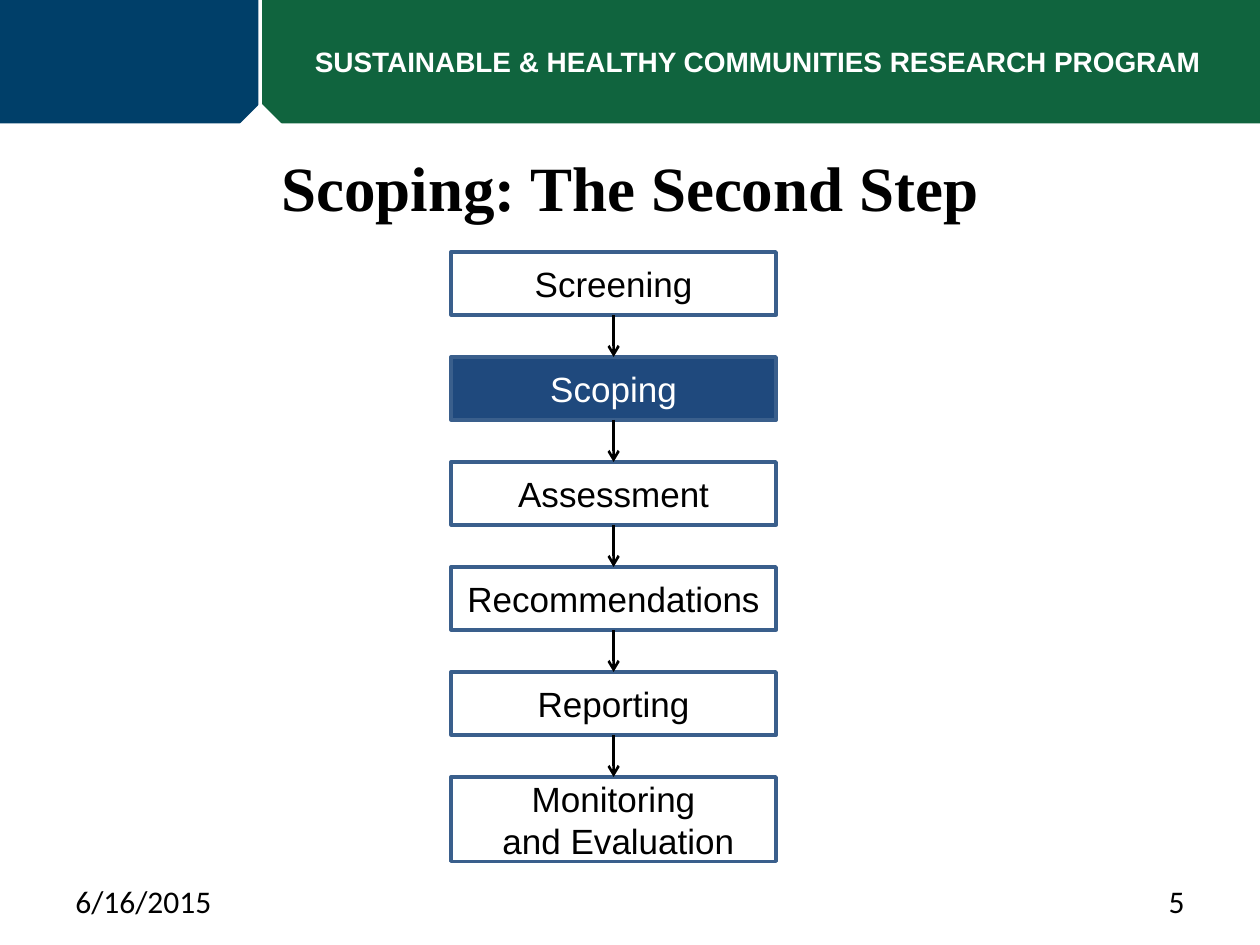
from dataclasses import dataclass

from lxml import etree
from pptx import Presentation
from pptx.dml.color import RGBColor
from pptx.enum import shapes, text
from pptx.oxml import ns
from pptx.util import Inches, Pt

WHITE = RGBColor(0xFF, 0xFF, 0xFF)
BLACK = RGBColor(0x00, 0x00, 0x00)
BANNER_BLUE = RGBColor(0x00, 0x3F, 0x69)
BANNER_GREEN = RGBColor(0x10, 0x64, 0x3E)
STEP_BLUE = RGBColor(0x1F, 0x49, 0x7D)
STEP_BORDER = RGBColor(0x3A, 0x5F, 0x8C)

STEP_LEFT, STEP_TOP, STEP_WIDTH, STEP_HEIGHT = 3.58, 2.0, 2.58, 0.5
STEP_PITCH = 5 / 6
BOTTOM, TOP = 2, 0


@dataclass(frozen=True)
class Step:
    lines: tuple[str, ...]
    height: float = STEP_HEIGHT
    current: bool = False


@dataclass(frozen=True)
class Label:
    words: str
    at: tuple[float, float, float, float]
    font: dict
    align: text.PP_ALIGN = text.PP_ALIGN.LEFT
    wrap: bool = True


STEPS = (
    Step(("Screening",)),
    Step(("Scoping",), current=True),
    Step(("Assessment",)),
    Step(("Recommendations",)),
    Step(("Reporting",)),
    Step(("Monitoring", " and Evaluation"), height=0.67),
)

FOOTER_FONT = {"name": "Calibri", "size": Pt(18)}
LABELS = (
    Label("SUSTAINABLE & HEALTHY COMMUNITIES RESEARCH PROGRAM", (2.4, 0.3, 7.35, 0.37),
          {"name": "Arial", "size": Pt(16), "bold": True, "color": WHITE}, wrap=False),
    Label("6/16/2015", (0.5, 6.95, 2.33, 0.4), FOOTER_FONT),
    Label("5", (7.17, 6.95, 2.33, 0.4), FOOTER_FONT, text.PP_ALIGN.RIGHT),
    Label("Scoping: The Second Step", (0.69, 1.11, 8.62, 0.74),
          {"name": "Times New Roman", "size": Pt(36), "bold": True}, text.PP_ALIGN.CENTER),
)


def write_lines(box, lines: tuple[str, ...], font: dict, align, wrap: bool = True) -> None:
    """Fill a shape with one formatted paragraph per line."""
    frame = box.text_frame
    frame.word_wrap = wrap
    frame.vertical_anchor = text.MSO_ANCHOR.MIDDLE
    for index, line in enumerate(lines):
        para = frame.add_paragraph() if index else frame.paragraphs[0]
        para.alignment = align
        span = para.add_run()
        span.text = line
        values = {"color": BLACK, **font}
        span.font.color.rgb = values.pop("color")
        for name, value in values.items():
            setattr(span.font, name, value)


def add_box(page, at: tuple[float, float, float, float], fill: RGBColor | None = None):
    box = page.shapes.add_shape(shapes.MSO_SHAPE.RECTANGLE, *map(Inches, at))
    box.shadow.inherit = False
    box.line.fill.background()
    if fill is None:
        box.fill.background()
    else:
        box.fill.solid()
        box.fill.fore_color.rgb = fill
    return box


def add_label(page, label: Label) -> None:
    box = page.shapes.add_textbox(*map(Inches, label.at))
    write_lines(box, (label.words,), label.font, label.align, label.wrap)


def add_step(page, step: Step, top: float):
    box = add_box(page, (STEP_LEFT, top, STEP_WIDTH, step.height),
                  STEP_BLUE if step.current else None)
    box.line.color.rgb = STEP_BORDER
    box.line.width = Pt(2)
    font = {"name": "Arial", "size": Pt(20), "color": WHITE if step.current else BLACK}
    write_lines(box, step.lines, font, text.PP_ALIGN.CENTER)
    return box


def add_arrow(page, upper, lower) -> None:
    arrow = page.shapes.add_connector(shapes.MSO_CONNECTOR.STRAIGHT, 0, 0, 0, 0)
    arrow.begin_connect(upper, BOTTOM)
    arrow.end_connect(lower, TOP)
    arrow.line.color.rgb = BLACK
    arrow.line.width = Pt(1.5)
    etree.SubElement(arrow.line._get_or_add_ln(), ns.qn("a:tailEnd"), type="arrow")
    etree.SubElement(arrow._element.spPr, ns.qn("a:effectLst"))


def add_banner(page) -> None:
    add_box(page, (0, 0, 2.05, 0.98), BANNER_BLUE)
    add_box(page, (2.08, 0, 7.92, 0.98), BANNER_GREEN)
    notch = add_box(page, (1.94, 0.87, 0.26, 0.26), WHITE)
    notch.rotation = 315


def main() -> None:
    deck = Presentation()
    deck.slide_width, deck.slide_height = Inches(10), Inches(7.5)
    page = deck.slides.add_slide(deck.slide_layouts[6])
    add_banner(page)
    for label in LABELS:
        add_label(page, label)
    boxes = [add_step(page, step, STEP_TOP + index * STEP_PITCH)
             for index, step in enumerate(STEPS)]
    for upper, lower in zip(boxes, boxes[1:]):
        add_arrow(page, upper, lower)
    deck.save("out.pptx")


if __name__ == "__main__":
    main()
